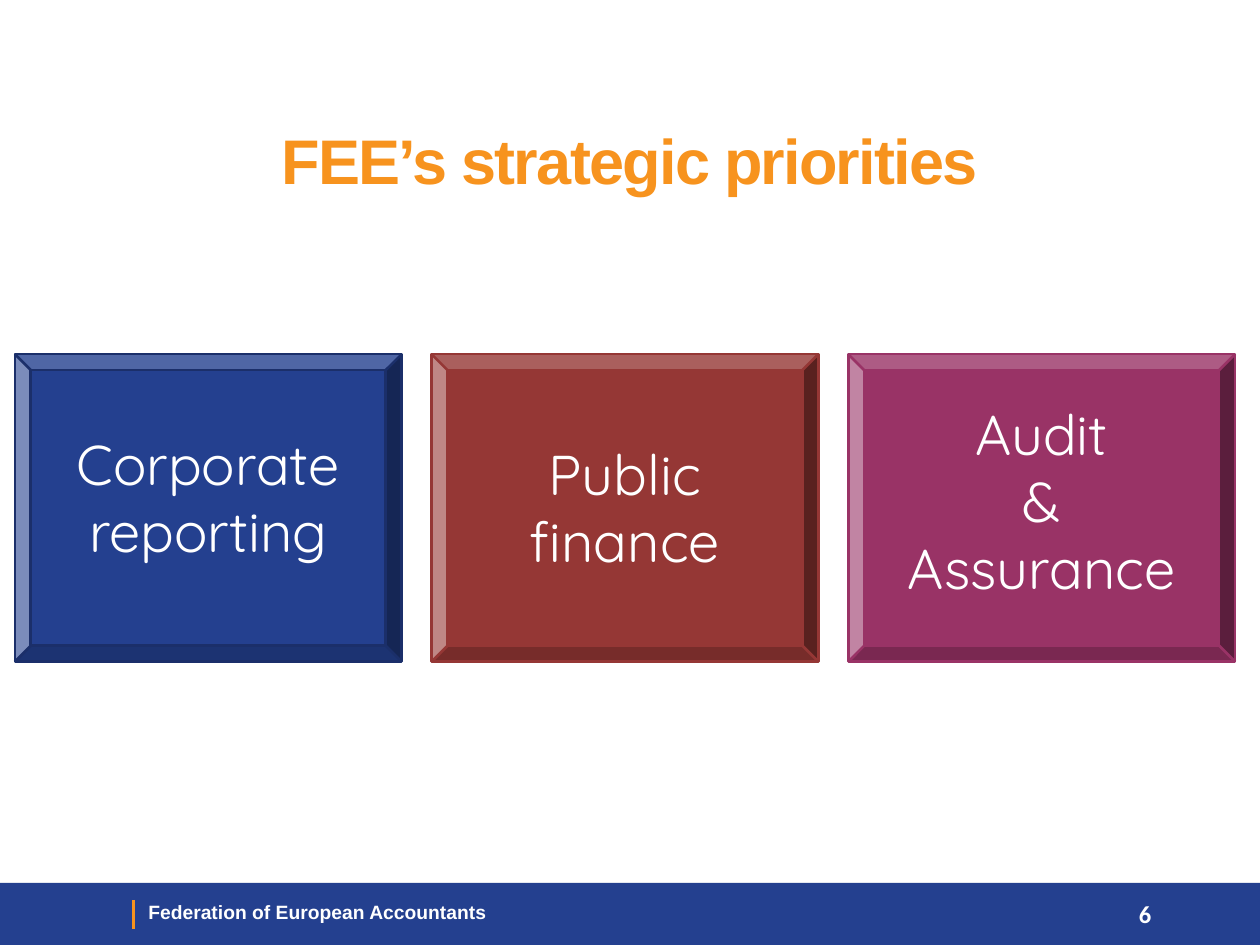
from dataclasses import dataclass

import pptx
import pptx.dml.color
import pptx.enum.shapes
import pptx.enum.text
import pptx.oxml
import pptx.oxml.ns
import pptx.util
from pptx.dml.color import RGBColor
from pptx.util import Cm, Pt

NAVY = RGBColor(0x24, 0x40, 0x8F)
DARK_NAVY = RGBColor(0x1B, 0x2F, 0x6A)
BRICK = RGBColor(0x95, 0x37, 0x35)
PLUM = RGBColor(0x99, 0x33, 0x66)
ORANGE = RGBColor(0xF7, 0x93, 0x1E)
WHITE = RGBColor(0xFF, 0xFF, 0xFF)

ALIGN = pptx.enum.text.PP_ALIGN
ANCHOR = pptx.enum.text.MSO_ANCHOR
SHAPES = pptx.enum.shapes.MSO_SHAPE

TILE_LEFT, TILE_TOP, TILE_PITCH = 0.3, 7.14, 8.4
TILE_WIDTH, TILE_HEIGHT = 7.8, 6.2
LABEL_INSET, LABEL_WIDTH = 0.66, 6.48
FOOTER_TOP, FOOTER_HEIGHT = 17.8, 1.25


@dataclass
class Priority:
    label: str
    fill: RGBColor
    outline: RGBColor
    label_top: float
    label_height: float


@dataclass
class TextStyle:
    font: str
    size: float
    color: RGBColor = WHITE
    bold: bool = False
    align: ALIGN = ALIGN.LEFT
    anchor: ANCHOR = ANCHOR.TOP


PRIORITIES = [
    Priority("Corporate reporting", NAVY, DARK_NAVY, 8.53, 3.0),
    Priority("Public finance", BRICK, BRICK, 8.74, 3.0),
    Priority("Audit\n&\nAssurance", PLUM, PLUM, 7.92, 4.37),
]
TITLE_STYLE = TextStyle("Arial", 36, ORANGE, True, ALIGN.CENTER, ANCHOR.MIDDLE)
LABEL_STYLE = TextStyle("Quicksand", 32, align=ALIGN.CENTER)
FOOTER_STYLE = TextStyle("Arial", 11, bold=True)
NUMBER_STYLE = TextStyle("Calibri", 14, bold=True, anchor=ANCHOR.MIDDLE)


def write_text(box, text: str, style: TextStyle) -> None:
    frame = box.text_frame
    frame.word_wrap = True
    frame.vertical_anchor = style.anchor
    frame.text = text
    for para in frame.paragraphs:
        para.alignment = style.align
        for span in para.runs:
            span.font.name = style.font
            span.font.size = Pt(style.size)
            span.font.bold = style.bold
            span.font.color.rgb = style.color


def add_text(page, left: float, top: float, width: float, height: float,
             text: str, style: TextStyle) -> None:
    box = page.shapes.add_textbox(Cm(left), Cm(top), Cm(width), Cm(height))
    write_text(box, text, style)


def add_footer(page) -> None:
    band = page.shapes.add_shape(
        SHAPES.RECTANGLE, 0, Cm(FOOTER_TOP), Cm(25.4), Cm(FOOTER_HEIGHT))
    band.shadow.inherit = False
    band.fill.solid()
    band.fill.fore_color.rgb = NAVY
    band.line.fill.background()

    add_text(page, 2.74, 18.03, 9.4, 0.74,
             "Federation of European Accountants", FOOTER_STYLE)

    divider = page.shapes.add_connector(
        pptx.enum.shapes.MSO_CONNECTOR.STRAIGHT,
        Cm(2.69), Cm(18.14), Cm(2.69), Cm(18.72))
    divider.line.color.rgb = ORANGE
    divider.line.width = Pt(1.5)
    properties = divider.element.spPr
    properties.append(pptx.oxml.parse_xml(
        f"<a:effectLst {pptx.oxml.ns.nsdecls('a')}/>"))


def add_title(page, text: str) -> None:
    title = page.shapes.title
    title.left, title.top = Cm(0), Cm(0.74)
    title.width, title.height = Cm(25.4), Cm(4.93)
    write_text(title, text, TITLE_STYLE)
    for span in title.text_frame.paragraphs[0].runs:
        span.font._element.set("spc", "-100")


def add_tile(page, left: float, priority: Priority) -> None:
    tile = page.shapes.add_shape(
        SHAPES.BEVEL, Cm(left), Cm(TILE_TOP), Cm(TILE_WIDTH), Cm(TILE_HEIGHT))
    tile.adjustments[0] = 0.052
    tile.shadow.inherit = False
    tile.fill.solid()
    tile.fill.fore_color.rgb = priority.fill
    tile.line.color.rgb = priority.outline
    tile.line.width = Pt(1.5)


def main() -> None:
    deck = pptx.Presentation()
    deck.slide_width, deck.slide_height = Cm(25.4), Cm(19.05)
    page = deck.slides.add_slide(deck.slide_layouts[5])

    add_footer(page)
    add_title(page, "FEE’s strategic priorities")
    add_text(page, 22.71, FOOTER_TOP, 1.6, FOOTER_HEIGHT, "6", NUMBER_STYLE)
    for index, priority in enumerate(PRIORITIES):
        left = TILE_LEFT + index * TILE_PITCH
        add_tile(page, left, priority)
        add_text(page, left + LABEL_INSET, priority.label_top, LABEL_WIDTH,
                 priority.label_height, priority.label, LABEL_STYLE)

    deck.save("out.pptx")


if __name__ == "__main__":
    main()
